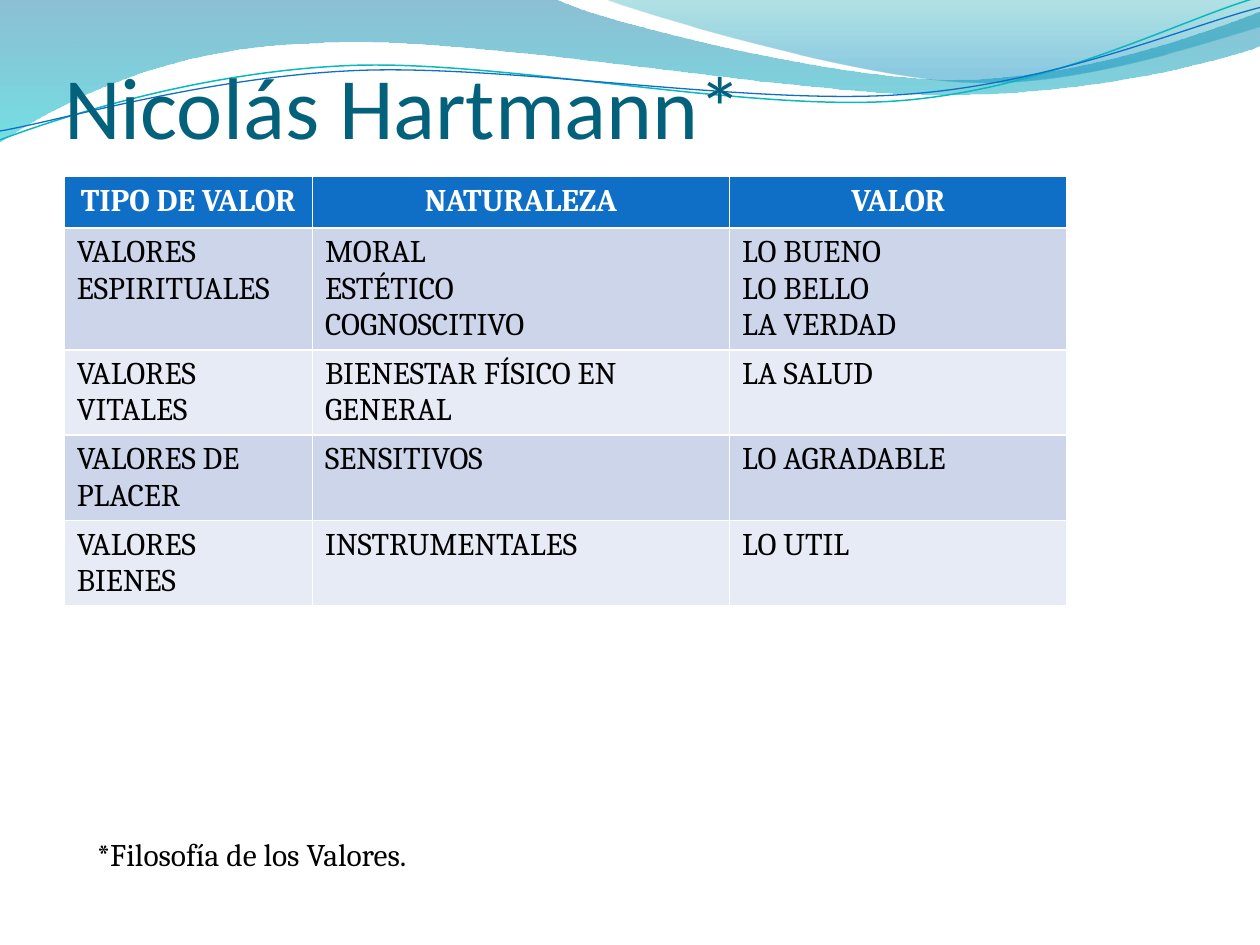
import math

from lxml import etree
from pptx import Presentation
from pptx import util as u
from pptx.dml.color import RGBColor
from pptx.enum import text
from pptx.oxml.ns import qn

HEADER = ["TIPO DE VALOR", "NATURALEZA", "VALOR"]
ROWS = [
    ["VALORES ESPIRITUALES", "MORAL\nESTÉTICO\nCOGNOSCITIVO", "LO BUENO\nLO BELLO\nLA VERDAD"],
    ["VALORES VITALES", "BIENESTAR FÍSICO EN GENERAL", "LA SALUD"],
    ["VALORES DE PLACER", "SENSITIVOS", "LO AGRADABLE"],
    ["VALORES BIENES", "INSTRUMENTALES", "LO UTIL"],
]
WIDE_WAVE = [
    (0, 0), (4.4, -0.01),
    (4.76, 0.17, 6.64, 0.63, 7.58, 0.63), (8.53, 0.63, 9.58, 0.26, 10, 0.09),
    (10.01, 0.36),
    (9.83, 0.44, 8.7, 0.76, 7.46, 0.75), (6.22, 0.75, 3.82, 0.28, 2.57, 0.34),
    (1.29, 0.36, 0.46, 0.83, -0.01, 1.13), (0, 0),
]
RIGHT_WAVE = [
    (4.79, -0.01),
    (5.09, 0.11, 6.82, 0.62, 7.69, 0.65), (8.56, 0.69, 9.61, 0.32, 10, 0.21),
    (10, 0), (4.79, -0.01),
]
TEAL_LINE = [
    (0, 1.11), (0.48, 0.93, 1.58, 0.57, 2.77, 0.52),
    (3.95, 0.47, 5.93, 0.89, 7.13, 0.8), (8.33, 0.71, 9.38, 0.15, 9.98, -0.02),
]
BLUE_LINE = [
    (0, 1.04), (0.47, 0.96, 1.64, 0.61, 2.83, 0.56),
    (4.03, 0.51, 5.97, 0.84, 7.17, 0.75), (8.36, 0.67, 9.41, 0.21, 10, 0.06),
]
TILT = -2.7


def color(value):
    return RGBColor.from_string(value)


def pairs(seg):
    return list(zip(seg[::2], seg[1::2]))


def add_curve(s, segments, close):
    points = [(u.Inches(x), u.Inches(y)) for seg in segments for x, y in pairs(seg)]
    builder = s.shapes.build_freeform(*points[0])
    builder.add_line_segments(points[1:], close=close)
    sp = builder.convert_to_shape()
    sp.shadow.inherit = False
    lines = iter(list(sp._element.iter(qn("a:lnTo"))))
    for seg in segments[1:]:
        first = next(lines)
        if len(seg) == 6:
            first.tag = qn("a:cubicBezTo")
            for _ in range(2):
                line = next(lines)
                first.append(line[0])
                line.getparent().remove(line)
    return sp


def add_wave(s, segments, stops):
    sp = add_curve(s, segments, True)
    sp.line.fill.background()
    sp.fill.gradient()
    sp.fill.gradient_angle = 270
    for stop, (position, value, _) in zip(sp.fill.gradient_stops, stops):
        stop.position = position
        stop.color.rgb = color(value)
    for clr, (_, _, opacity) in zip(sp._element.spPr.iter(qn("a:srgbClr")), stops):
        etree.SubElement(clr, qn("a:alpha"), val=str(opacity * 1000))


def turn(seg, center, degrees):
    cx, cy = center
    c, n = math.cos(math.radians(degrees)), math.sin(math.radians(degrees))
    turned = [(cx + (x - cx) * c - (y - cy) * n, cy + (x - cx) * n + (y - cy) * c)
              for x, y in pairs(seg)]
    return [value for point in turned for value in point]


def add_wave_line(s, segments, center, value, width):
    sp = add_curve(s, [turn(seg, center, -TILT) for seg in segments], False)
    sp.rotation = TILT
    sp.fill.background()
    sp.line.color.rgb = color(value)
    sp.line.width = u.Pt(width)


def write(tf, content, size=18, font="Cambria", fill="000000", bold=False, align=None):
    for i, line in enumerate(content.split("\n")):
        p = tf.add_paragraph() if i else tf.paragraphs[0]
        p.alignment = align
        r = p.add_run()
        r.text = line
        r.font.size, r.font.name, r.font.bold = u.Pt(size), font, bold
        r.font.color.rgb = color(fill)


def add_text(s, box, content, anchor=text.MSO_ANCHOR.TOP, insets=(0.1, 0.05, 0.1, 0.05),
             fit=text.MSO_AUTO_SIZE.NONE, **fmt):
    tf = s.shapes.add_textbox(*map(u.Inches, box)).text_frame
    tf.word_wrap = True
    tf.auto_size = fit
    tf.vertical_anchor = anchor
    tf.margin_left, tf.margin_top, tf.margin_right, tf.margin_bottom = map(u.Inches, insets)
    write(tf, content, **fmt)


def add_values_table(s):
    widths = [1.97, 3.31, 2.68]
    height = 0.41
    rows = [HEADER] + ROWS
    frame = s.shapes.add_table(len(rows), len(widths), u.Inches(0.51), u.Inches(1.4),
                               u.Inches(7.95), u.Inches(3.8))
    table = frame.table
    for column, width in zip(table.columns, widths):
        column.width = u.Inches(width)
    for i, row in enumerate(rows):
        header = i == 0
        table.rows[i].height = u.Inches(height)
        band = "0F6FC6" if header else ("E7EBF5", "CCD5EA")[i % 2]
        for j, content in enumerate(row):
            cell = table.cell(i, j)
            cell.fill.solid()
            cell.fill.fore_color.rgb = color(band)
            write(cell.text_frame, content, bold=header,
                  fill="FFFFFF" if header else "000000",
                  align=text.PP_ALIGN.CENTER if header else None)


def main():
    prs = Presentation()
    prs.slide_width, prs.slide_height = u.Inches(10), u.Inches(7.5)
    s = prs.slides.add_slide(prs.slide_layouts[6])
    add_wave(s, WIDE_WAVE, [(0, "0074A1", 45), (1, "00C6CF", 55)])
    add_wave(s, RIGHT_WAVE, [(0, "00A1A9", 30), (0.8, "008BBF", 45)])
    add_wave_line(s, TEAL_LINE, (4.99, 0.58), "0AB8BF", 0.85)
    add_wave_line(s, BLUE_LINE, (5, 0.59), "0F6FC6", 0.75)
    add_text(s, (0.51, 0, 9, 1.25), "Nicolás Hartmann*", anchor=text.MSO_ANCHOR.BOTTOM,
             insets=(0, 0.05, 0, 0), size=50, font="Calibri", fill="04617B")
    add_values_table(s)
    add_text(s, (0.67, 6.58, 8.74, 0.4), "*Filosofía de los Valores.",
             fit=text.MSO_AUTO_SIZE.SHAPE_TO_FIT_TEXT)
    prs.save("out.pptx")


if __name__ == "__main__":
    main()
